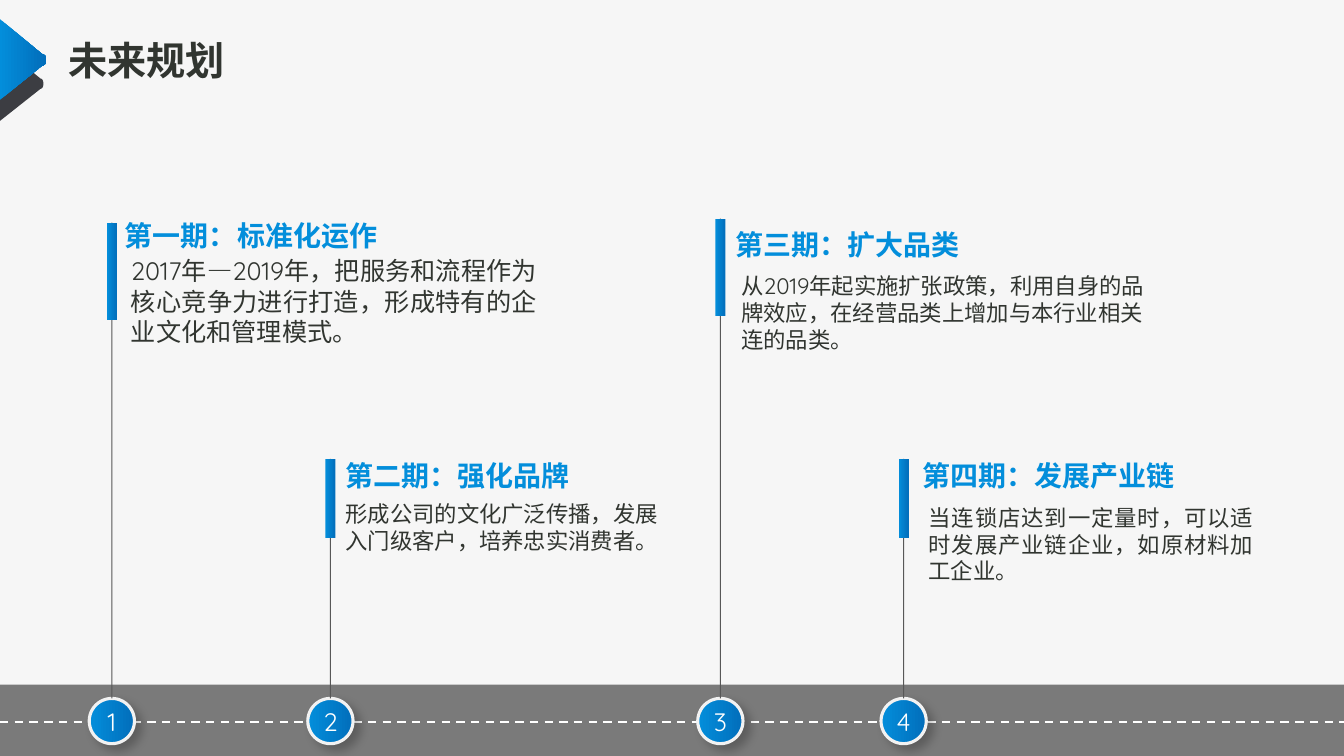
from dataclasses import dataclass

from lxml import etree
from pptx import Presentation
from pptx.dml.color import RGBColor
from pptx.enum.dml import MSO_LINE
from pptx.enum.shapes import MSO_CONNECTOR, MSO_SHAPE
from pptx.enum.text import MSO_ANCHOR, MSO_AUTO_SIZE, PP_ALIGN
from pptx.oxml.ns import qn
from pptx.util import Cm, Pt

RECT, OVAL = MSO_SHAPE.RECTANGLE, MSO_SHAPE.OVAL
STRAIGHT = MSO_CONNECTOR.STRAIGHT
DASH = MSO_LINE.DASH
LEFT, CENTER, JUSTIFY = PP_ALIGN.LEFT, PP_ALIGN.CENTER, PP_ALIGN.JUSTIFY
MIDDLE = MSO_ANCHOR.MIDDLE
GROW = MSO_AUTO_SIZE.SHAPE_TO_FIT_TEXT

PAPER = RGBColor(0xF6, 0xF6, 0xF6)
INK = RGBColor(0x31, 0x35, 0x30)
SLATE = RGBColor(0x3C, 0x3D, 0x42)
SKY = RGBColor(0x03, 0x8E, 0xDB)
BLUE = RGBColor(0x02, 0x6E, 0xBB)
ROAD = RGBColor(0x7A, 0x7A, 0x7A)
STEM = RGBColor(0x57, 0x57, 0x57)
RIM = RGBColor(0xF2, 0xF2, 0xF2)
WHITE = RGBColor(0xFF, 0xFF, 0xFF)

FONT = "Quicksand"
WIDTH, HEIGHT = 33.88, 19.05
DOT, DOT_TOP = 1.14, 17.6
BAR = 0.25


@dataclass
class Label:
    text: str
    x: float
    y: float
    w: float
    h: float
    size: int
    align: PP_ALIGN = JUSTIFY
    color: RGBColor = INK
    bold: bool = False


@dataclass
class Phase:
    mid: float
    top: float
    tall: float
    head: Label
    body: Label


@dataclass
class Wedge:
    top: float
    edge: float
    upper: float
    tip: float
    lower: float
    base: float


def title(text: str, x: float, y: float, w: float) -> Label:
    return Label(text, x, y, w, 1.12, 20, color=SKY, bold=True)


TITLE = Label("未来规划", 1.47, 0.79, 13, 1.45, 28, LEFT, bold=True)
DARK = Wedge(1.12, 1.02, 1.98, 1.12, 2.24, 3.07)
LIGHT = Wedge(0.46, 1.07, 1.37, 1.2, 1.65, 2.54)
PHASES = [
    Phase(2.82, 5.61, 2.46,
          title("第一期：标准化运作", 2.9, 5.38, 10.34),
          Label("2017年—2019年，把服务和流程作为核心竞争力进行打造，形成特有的企业文化和管理模式。",
                3.05, 6.32, 10.74, 2.57, 18)),
    Phase(8.33, 11.56, 2.01,
          title("第二期：强化品牌", 8.46, 11.43, 10.41),
          Label("形成公司的文化广泛传播，发展入门级客户，培养忠实消费者。",
                8.46, 12.47, 8.64, 1.63, 16, LEFT)),
    Phase(18.16, 5.51, 2.46,
          title("第三期：扩大品类", 18.29, 5.61, 11.86),
          Label("从2019年起实施扩张政策，利用自身的品牌效应，在经营品类上增加与本行业相关连的品类。",
                18.44, 6.73, 10.69, 2.31, 16, LEFT)),
    Phase(22.78, 11.56, 2.01,
          title("第四期：发展产业链", 23.01, 11.43, 11.73),
          Label("当连锁店达到一定量时，可以适时发展产业链企业，如原材料加工企业。",
                23.16, 12.57, 8.69, 2.31, 16)),
]


def paint(shape, color: RGBColor | None = None) -> None:
    shape.shadow.inherit = False
    shape.line.fill.background()
    if color is not None:
        shape.fill.solid()
        shape.fill.fore_color.rgb = color
        return
    shape.fill.gradient()
    shape.fill.gradient_angle = 0
    for stop, tone in zip(shape.fill.gradient_stops, (SKY, BLUE)):
        stop.color.rgb = tone


def write(frame, text: str, size: int, color: RGBColor,
          align: PP_ALIGN, bold: bool = False) -> None:
    frame.text = text
    para = frame.paragraphs[0]
    para.alignment = align
    font = para.runs[0].font
    font.name, font.size, font.bold = FONT, Pt(size), bold
    font.color.rgb = color


def add_label(shapes, label: Label) -> None:
    box = shapes.add_textbox(Cm(label.x), Cm(label.y), Cm(label.w), Cm(label.h))
    box.text_frame.word_wrap = True
    box.text_frame.auto_size = GROW
    write(box.text_frame, label.text, label.size, label.color,
          label.align, label.bold)


def add_line(shapes, x1: float, y1: float, x2: float, y2: float,
             color: RGBColor, width: float):
    line = shapes.add_connector(STRAIGHT, Cm(x1), Cm(y1), Cm(x2), Cm(y2))
    line.line.color.rgb = color
    line.line.width = Pt(width)
    etree.SubElement(line._element.spPr, qn("a:effectLst"))
    return line


def add_wedge(shapes, wedge: Wedge, color: RGBColor | None = None) -> None:
    steps = 12
    curve = []
    for i in range(steps + 1):
        t = i / steps
        bulge = 3 * t * (1 - t)
        ease = t * t * (3 - 2 * t)
        curve.append((Cm(wedge.edge + bulge * (wedge.tip - wedge.edge)),
                      Cm(wedge.upper + ease * (wedge.lower - wedge.upper))))
    pen = shapes.build_freeform(Cm(-0.03), Cm(wedge.top))
    pen.add_line_segments(curve + [(Cm(-0.03), Cm(wedge.base))], close=True)
    paint(pen.convert_to_shape(), color)


def add_dot(shapes, mid: float, num: int):
    dot = shapes.add_shape(OVAL, Cm(mid - DOT / 2), Cm(DOT_TOP), Cm(DOT), Cm(DOT))
    paint(dot)
    dot.line.color.rgb = RIM
    dot.line.width = Pt(2.25)
    glow = etree.SubElement(
        dot._element.spPr.find(qn("a:effectLst")), qn("a:outerShdw"),
        blurRad=str(Pt(7)), dist=str(Pt(5.9)), dir="2700000", algn="tl", rotWithShape="0")
    black = etree.SubElement(glow, qn("a:srgbClr"), val="000000")
    etree.SubElement(black, qn("a:alpha"), val="23000")
    frame = dot.text_frame
    frame.margin_left = frame.margin_right = 0
    frame.margin_top = frame.margin_bottom = 0
    frame.vertical_anchor = MIDDLE
    write(frame, str(num), 18, WHITE, CENTER)
    return dot


def add_phase(shapes, phase: Phase, num: int) -> None:
    dot = add_dot(shapes, phase.mid, num)
    stem = add_line(shapes, phase.mid, DOT_TOP, phase.mid, phase.top, STEM, 0.75)
    bar = shapes.add_shape(RECT, Cm(phase.mid - BAR / 2), Cm(phase.top),
                           Cm(BAR), Cm(phase.tall))
    paint(bar)
    stem.begin_connect(dot, 0)
    stem.end_connect(bar, 0)
    add_label(shapes, phase.body)
    add_label(shapes, phase.head)


def main() -> None:
    deck = Presentation()
    deck.slide_width, deck.slide_height = Cm(WIDTH), Cm(HEIGHT)
    slide = deck.slides.add_slide(deck.slide_layouts[6])
    slide.background.fill.solid()
    slide.background.fill.fore_color.rgb = PAPER
    shapes = slide.shapes
    add_label(shapes, TITLE)
    add_wedge(shapes, DARK, SLATE)
    add_wedge(shapes, LIGHT)
    road = shapes.add_shape(RECT, 0, Cm(17.25), Cm(WIDTH), Cm(1.9))
    paint(road, ROAD)
    lane = add_line(shapes, 0, 18.19, WIDTH, 18.19, WHITE, 1.5)
    lane.line.dash_style = DASH
    for num, phase in enumerate(PHASES, 1):
        add_phase(shapes, phase, num)
    deck.save("out.pptx")


if __name__ == "__main__":
    main()
